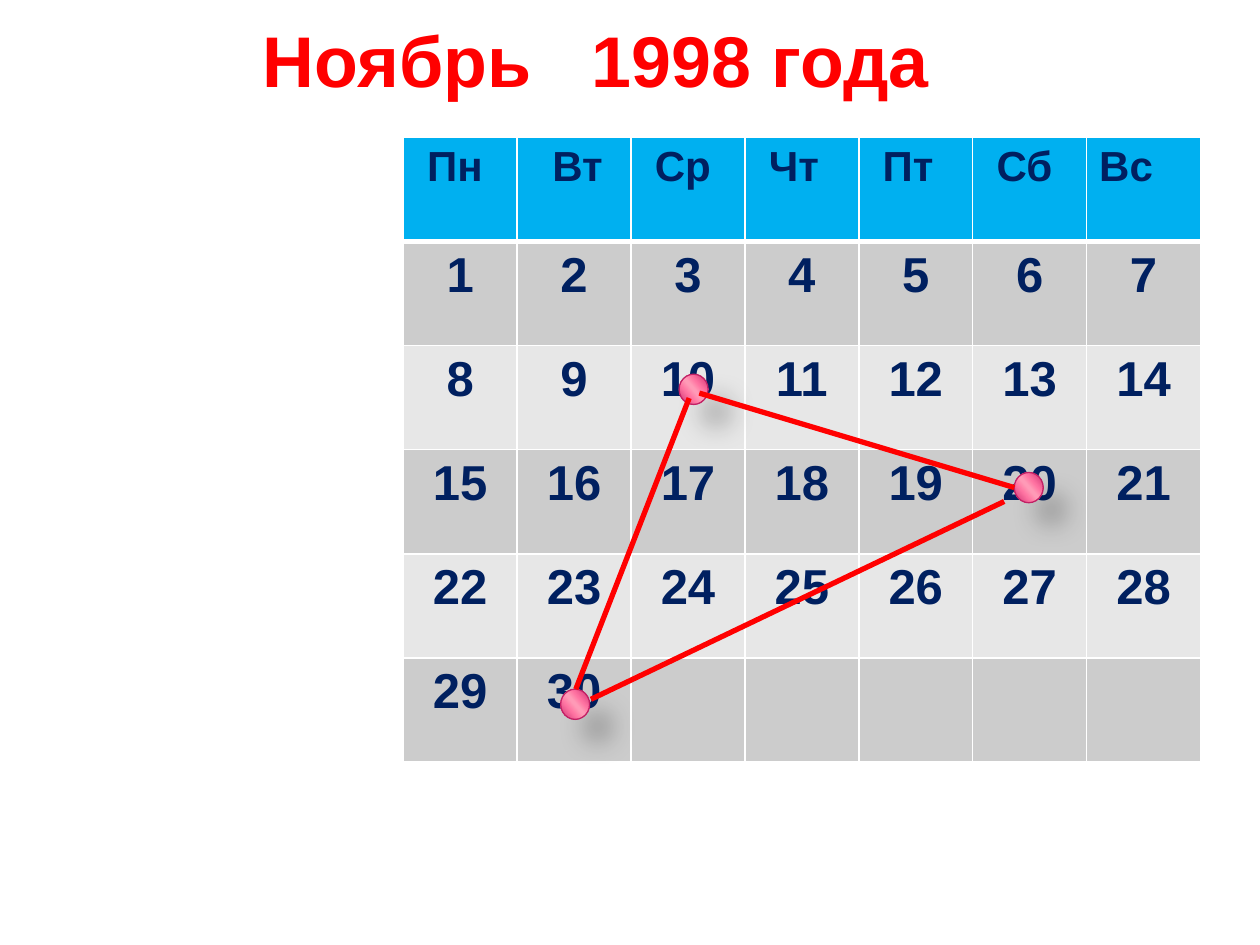
from dataclasses import dataclass
from lxml import etree
from pptx import Presentation
from pptx.dml.color import RGBColor
from pptx.enum import shapes, text
from pptx.oxml import parse_xml
from pptx.oxml.ns import nsdecls, qn
from pptx.util import Inches, Pt


@dataclass(frozen=True)
class Theme:
    font: str = "Arial"
    title_size: int = 41
    head_size: int = 24
    day_size: int = 28
    red: str = "FF0000"
    navy: str = "002060"
    head_fill: str = "00B0F0"
    bands: tuple = ("CCCCCC", "E7E7E7")
    border: str = "FFFFFF"
    marker_line: str = "C12165"
    marker_stops: tuple = ((0, "CC2D70"), (33, "FF73A2"), (47, "FF9AB7"),
                           (53, "FF9AB7"), (68, "FF75A3"), (100, "CC2D70"))


theme = Theme()
prs = Presentation()
prs.slide_width, prs.slide_height = Inches(10), Inches(7.5)
slide = prs.slides.add_slide(prs.slide_layouts[6])


def place(*shares):
    sides = (prs.slide_width, prs.slide_height) * 2
    return [round(side * share / 100) for side, share in zip(sides, shares)]


def add_run(p, words, size, color):
    r = p.add_run()
    r.text = words
    r.font.name, r.font.size, r.font.bold = theme.font, Pt(size), True
    r.font.color.rgb = RGBColor.from_string(color)
    return r


sp = slide.shapes.add_textbox(*place(2.3, 0, 90, 12.53))
tf = sp.text_frame
tf.word_wrap = True
tf.vertical_anchor = text.MSO_ANCHOR.MIDDLE
p = tf.paragraphs[0]
p.alignment = text.PP_ALIGN.CENTER
for words, spacing in (("Ноябрь", 0), (" ", 2280), ("1998 года", 0)):
    r = add_run(p, words, theme.title_size, theme.red)
    if spacing:
        r.font._element.set("spc", str(spacing))

weekdays = ("Пн", "Вт", "Ср", "Чт", "Пт", "Сб", "Вс")
indents = (1, 2, 1, 1, 1, 1, 0)
days_in_month = 30
n_cols = len(weekdays)
n_rows = 1 + -(-days_in_month // n_cols)
table = slide.shapes.add_table(n_rows, n_cols, *place(32, 14.53, 63.3, 66.13)).table

for row in range(n_rows):
    for col in range(n_cols):
        cell = table.cell(row, col)
        p = cell.text_frame.paragraphs[0]
        day = (row - 1) * n_cols + col + 1
        if row == 0:
            cell.margin_left = Inches(0.1 + 0.09 * indents[col])
            add_run(p, weekdays[col], theme.head_size, theme.navy)
        elif day <= days_in_month:
            p.alignment = text.PP_ALIGN.CENTER
            add_run(p, str(day), theme.day_size, theme.navy)
        fill = theme.bands[(row - 1) % 2] if row else theme.head_fill
        cell.fill.solid()
        cell.fill.fore_color.rgb = RGBColor.from_string(fill)
        for i, side in enumerate("LRTB"):
            thick = (row, side) in ((0, "B"), (1, "T"))
            cell._tc.tcPr.insert(i, parse_xml(
                f'<a:ln{side} {nsdecls("a")} w="{Pt(3 if thick else 1)}"><a:solidFill>'
                f'<a:srgbClr val="{theme.border}"/></a:solidFill></a:ln{side}>'))

stops = "".join(f'<a:gs pos="{pos * 1000}"><a:srgbClr val="{color}"/></a:gs>'
                for pos, color in theme.marker_stops)
for left, top in ((53.9, 39.6), (80.5, 50), (44.5, 72.93)):
    sp = slide.shapes.add_shape(shapes.MSO_SHAPE.FLOWCHART_CONNECTOR,
                                *place(left, top, 2.3, 3.2))
    sp.line.color.rgb = RGBColor.from_string(theme.marker_line)
    sp.line.width = Pt(0.75)
    sp_pr = sp._element.spPr
    sp_pr.find(qn("a:prstGeom")).addnext(parse_xml(
        f'<a:gradFill {nsdecls("a")} rotWithShape="1"><a:gsLst>{stops}</a:gsLst>'
        f'<a:lin ang="{139 * 60000}" scaled="1"/></a:gradFill>'))
    sp_pr.append(parse_xml(
        f'<a:effectLst {nsdecls("a")}><a:outerShdw blurRad="{Pt(15)}" dist="{Pt(18)}" '
        f'dir="{45 * 60000}" rotWithShape="0"><a:srgbClr val="000000">'
        '<a:alpha val="26000"/></a:srgbClr></a:outerShdw></a:effectLst>'))

for start, end in (((46.9, 74), (79.7, 53.07)),
                   ((55.5, 41.6), (80.5, 51.6)),
                   ((45.7, 72.93), (54.7, 42.13))):
    line = slide.shapes.add_connector(shapes.MSO_CONNECTOR.STRAIGHT, *place(*start, *end))
    line.line.color.rgb = RGBColor.from_string(theme.red)
    line.line.width = Pt(3)
    etree.SubElement(line._element.spPr, qn("a:effectLst"))

prs.save("out.pptx")
